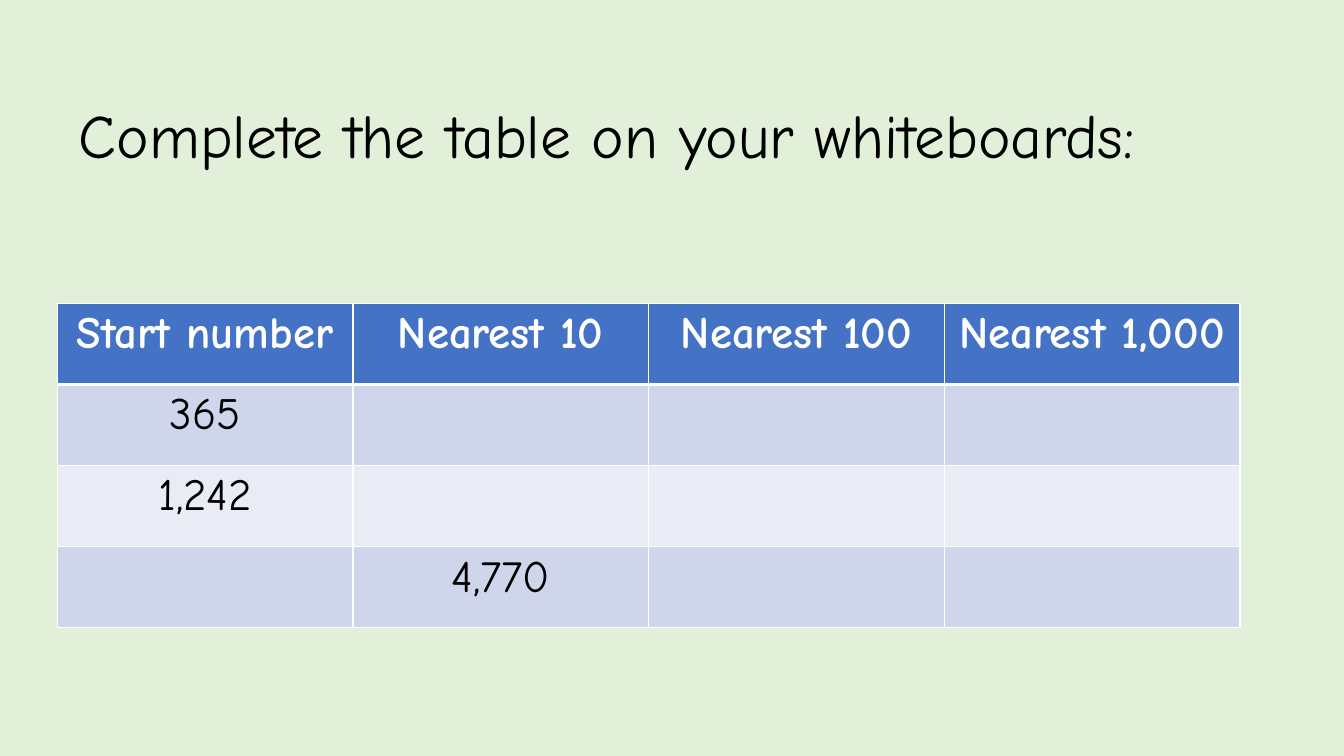
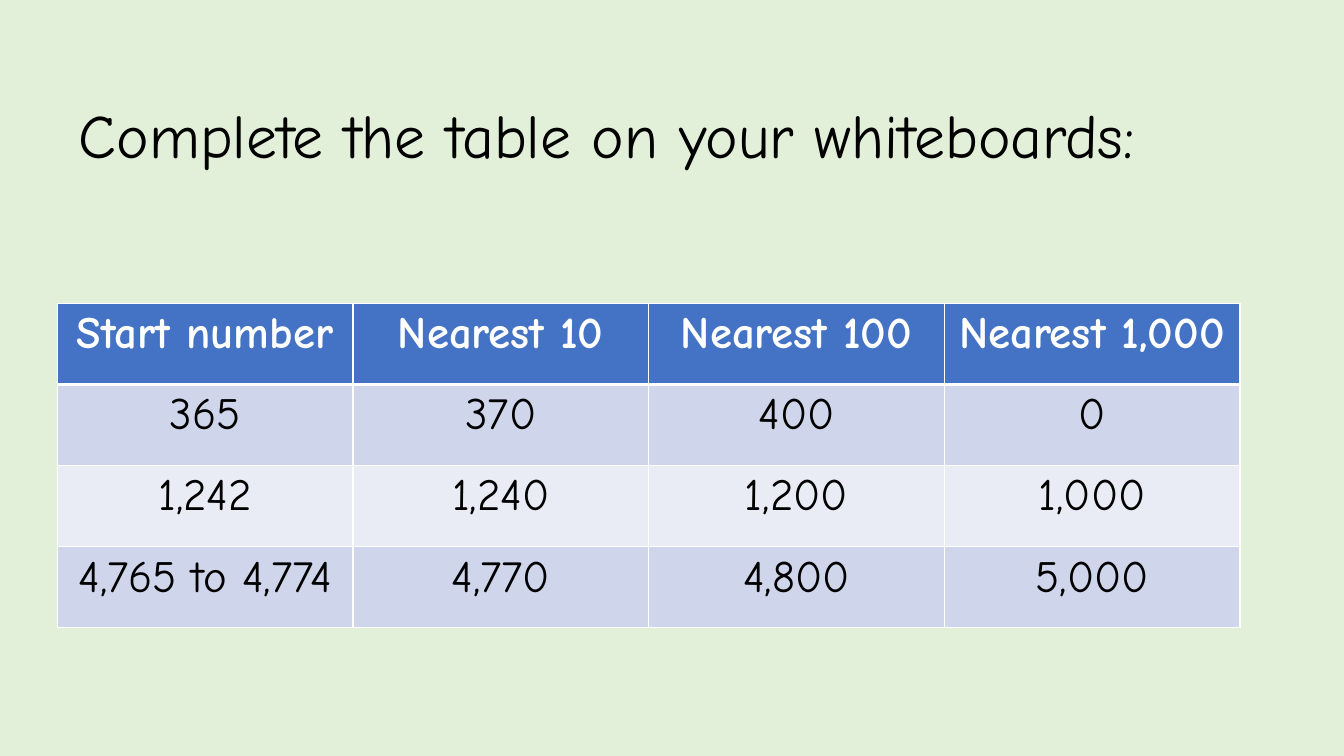
import lxml.etree
import pptx
import pptx.dml.color
import pptx.enum.text
import pptx.oxml.ns
import pptx.util

FONT = "Comic Neue"
BACKGROUND = "E2F0D9"
INK = "000000"
WHITE = "FFFFFF"
HEADER_FILL = "4472C4"
BAND_FILLS = ("CFD5EA", "E9EBF5")
TITLE = "Complete the table on your whiteboards:"
TITLE_BOX = (49, 46.8, 867.6, 104.4)
TABLE_BOX = (41, 216.7, 844.8, 231.8)
HEADINGS = ("Start number", "Nearest 10", "Nearest 100", "Nearest 1,000")
QUESTIONS = (
    ("365", "", "", ""),
    ("1,242", "", "", ""),
    ("", "4,770", "", ""),
)
ANSWERS = (
    ("365", "370", "400", "0"),
    ("1,242", "1,240", "1,200", "1,000"),
    ("4,765 to 4,774", "4,770", "4,800", "5,000"),
)


def colour(value):
    """Turn a hex string into a colour."""
    return pptx.dml.color.RGBColor.from_string(value)


def paint(fill, value):
    """Give a fill one solid colour."""
    fill.solid()
    fill.fore_color.rgb = colour(value)


def add_span(para, text, size, ink, bold=False):
    """Add one formatted run to a paragraph."""
    span = para.add_run()
    span.text = text
    span.font.name = FONT
    span.font.size = pptx.util.Pt(size)
    span.font.bold = bold
    span.font.color.rgb = colour(ink)


def add_border(cell, side, width):
    """Draw a white line on one side of a cell."""
    qn = pptx.oxml.ns.qn
    properties = cell._tc.get_or_add_tcPr()
    line = lxml.etree.SubElement(
        properties, qn("a:ln" + side), w=str(pptx.util.Pt(width)))
    solid = lxml.etree.SubElement(line, qn("a:solidFill"))
    lxml.etree.SubElement(solid, qn("a:srgbClr"), val=WHITE)


def place_title(page, box, text):
    """Move and format the title placeholder."""
    title = page.shapes.title
    title.left, title.top, title.width, title.height = map(pptx.util.Pt, box)
    frame = title.text_frame
    frame.word_wrap = True
    frame.auto_size = pptx.enum.text.MSO_AUTO_SIZE.NONE
    frame.vertical_anchor = pptx.enum.text.MSO_ANCHOR.MIDDLE
    para = frame.paragraphs[0]
    para.alignment = pptx.enum.text.PP_ALIGN.LEFT
    para.line_spacing = 0.9
    add_span(para, text, 44, INK)


def fill_cell(cell, text, row_index):
    """Style one cell by its row and write its text."""
    header = row_index == 0
    widths = {"L": 1, "R": 1, "T": 3 if row_index == 1 else 1,
              "B": 3 if header else 1}
    for side, width in widths.items():
        add_border(cell, side, width)
    paint(cell.fill, HEADER_FILL if header else BAND_FILLS[(row_index - 1) % 2])
    para = cell.text_frame.paragraphs[0]
    para.alignment = pptx.enum.text.PP_ALIGN.CENTER
    if text:
        add_span(para, text, 32, WHITE if header else INK, header)


def place_table(page, box, rows):
    """Add a rounding table with equal rows and columns."""
    frame = page.shapes.add_table(
        len(rows), len(rows[0]), *map(pptx.util.Pt, box))
    table = frame.table
    for column in table.columns:
        column.width = pptx.util.Pt(box[2] / len(rows[0]))
    for row in table.rows:
        row.height = pptx.util.Pt(box[3] / len(rows))
    for row_index, texts in enumerate(rows):
        for column_index, text in enumerate(texts):
            fill_cell(table.cell(row_index, column_index), text, row_index)


def add_table_slide(deck, body):
    """Add a slide with the shared title and a rounding table."""
    page = deck.slides.add_slide(deck.slide_layouts.get_by_name("Title Only"))
    place_title(page, TITLE_BOX, TITLE)
    place_table(page, TABLE_BOX, (HEADINGS, *body))


def main():
    """Build and save the deck."""
    deck = pptx.Presentation()
    deck.slide_width = pptx.util.Pt(960)
    deck.slide_height = pptx.util.Pt(540)
    paint(deck.slide_master.background.fill, BACKGROUND)
    for body in (QUESTIONS, ANSWERS):
        add_table_slide(deck, body)
    deck.save("out.pptx")


if __name__ == "__main__":
    main()
